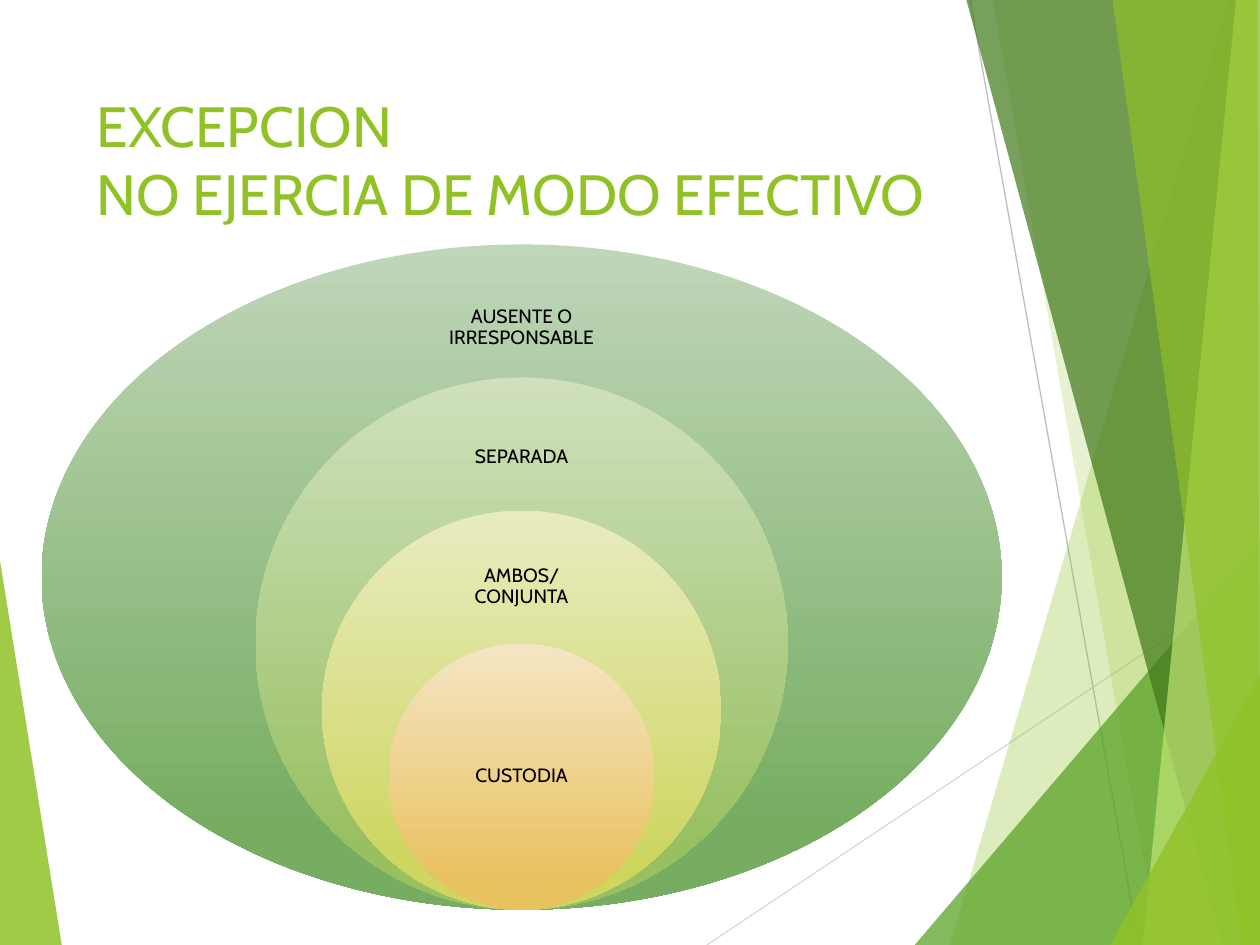
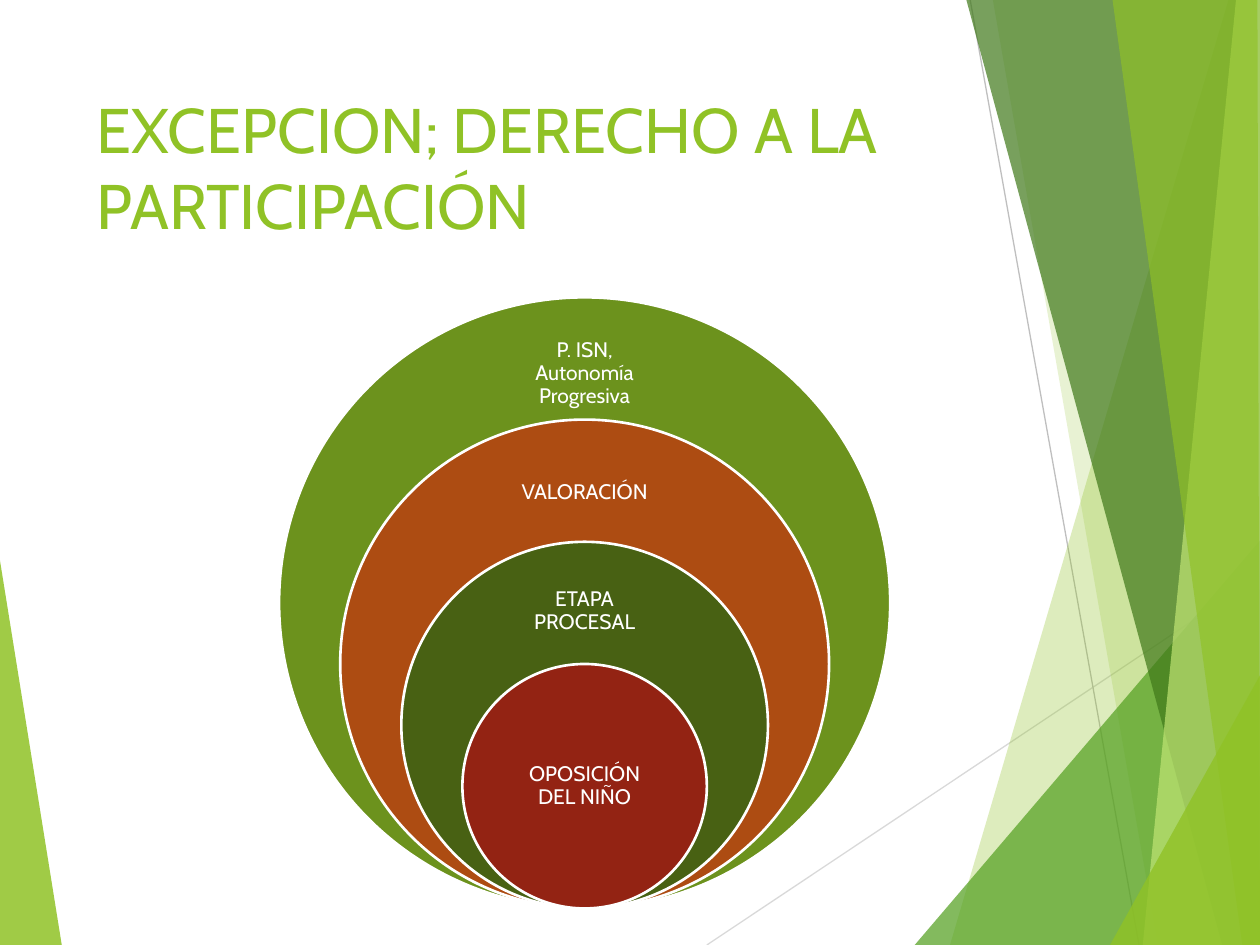
from dataclasses import dataclass

from lxml import etree
from pptx import Presentation
from pptx import util as u
from pptx.dml.color import RGBColor
from pptx.enum import shapes, text
from pptx.oxml import ns


@dataclass(frozen=True)
class Theme:
    font: str = "Cabin"
    lime: str = "90C226"
    green: str = "54A021"
    forest: str = "3F7819"
    pale_lime: str = "C0E474"
    light_gray: str = "D9D9D9"
    mid_gray: str = "BFBFBF"
    black: str = "000000"
    white: str = "FFFFFF"
    soft_rings: tuple = (("C0D6B9", "76AD61"), ("CFE0BC", "98C061"),
                         ("E8EBC0", "CED660"), ("F5E5C5", "E9C260"))
    solid_rings: tuple = ("6C921D", "AD4C12", "486113", "932313")
    long_title: float = 32.4
    title: float = 36
    soft_label: float = 11
    solid_label: float = 12
    hairline: float = 0.75
    outline: float = 1.5


THEME = Theme()
WIDTH, HEIGHT = 10, 7.5

RAYS = (((5.61, HEIGHT), (WIDTH, 4.57), THEME.light_gray),
        ((7.7, 0), (9.04, HEIGHT), THEME.mid_gray))
LEFT_WEDGE = (((0, 4.45), (0.49, HEIGHT), (0, HEIGHT)), THEME.lime, 85)
RIGHT_FACETS = (
    (((9.75, 0), (7.54, HEIGHT), (WIDTH, HEIGHT), (WIDTH, 0)), THEME.lime, 30),
    (((7.88, 0), (9.19, HEIGHT), (WIDTH, HEIGHT), (WIDTH, 0)), THEME.lime, 20),
    (((7.26, HEIGHT), (WIDTH, 4.29), (WIDTH, HEIGHT)), THEME.green, 72),
    (((7.67, 0), (9.7, HEIGHT), (WIDTH, HEIGHT), (WIDTH, 0)), THEME.forest, 70),
    (((9.81, 0), (9.07, HEIGHT), (WIDTH, HEIGHT), (WIDTH, 0)), THEME.pale_lime, 70),
    (((8.83, 0), (9.86, HEIGHT), (WIDTH, HEIGHT), (9.98, 0)), THEME.lime, 65),
    (((8.81, HEIGHT), (WIDTH, 5.36), (WIDTH, HEIGHT)), THEME.lime, 80),
)

RING_STEP = 0.2
LABEL_WIDTHS = (0.28, 0.35, 0.47, 0.71)
LABEL_TOPS = (0.05, 0.06, 0.08, 0.25)
LABEL_HEIGHTS = (0.15, 0.18, 0.22, 0.5)


def apply(target, values):
    for name, value in values.items():
        setattr(target, name, value)


class Painter:
    def __init__(self, deck, theme):
        self.deck = deck
        self.theme = theme
        self.page = None

    def new_page(self):
        self.page = self.deck.slides.add_slide(self.deck.slide_layouts[6])
        self.facet(*LEFT_WEDGE)
        for ray in RAYS:
            self.ray(*ray)
        for facet in RIGHT_FACETS:
            self.facet(*facet)

    def facet(self, corners, color, opacity):
        points = [(u.Inches(x), u.Inches(y)) for x, y in corners]
        builder = self.page.shapes.build_freeform(*points[0])
        builder.add_line_segments(points[1:], close=True)
        shape = builder.convert_to_shape()
        self.paint(shape, color)
        tint = shape._element.spPr.find(".//" + ns.qn("a:srgbClr"))
        etree.SubElement(tint, ns.qn("a:alpha"), val=str(opacity * 1000))

    def ray(self, start, end, color):
        ends = [u.Inches(value) for value in start + end]
        ray = self.page.shapes.add_connector(shapes.MSO_CONNECTOR.STRAIGHT, *ends)
        ray.line.color.rgb = RGBColor.from_string(color)
        ray.line.width = u.Pt(self.theme.hairline)
        etree.SubElement(ray._element.spPr, ns.qn("a:effectLst"))

    def paint(self, shape, fill, outline=None):
        shape.shadow.inherit = False
        if isinstance(fill, tuple):
            shape.fill.gradient()
            shape.fill.gradient_angle = 270
            for stop, color, position in zip(shape.fill.gradient_stops, fill, (0, 0.88)):
                stop.color.rgb = RGBColor.from_string(color)
                stop.position = position
        else:
            shape.fill.solid()
            shape.fill.fore_color.rgb = RGBColor.from_string(fill)
        if outline:
            shape.line.color.rgb = RGBColor.from_string(outline)
            shape.line.width = u.Pt(self.theme.outline)
        else:
            shape.line.fill.background()

    def add_text(self, words, place, size, color, frame_format, para_format):
        box = self.page.shapes.add_textbox(*[u.Inches(value) for value in place])
        apply(box.text_frame, {"word_wrap": True, **frame_format})
        para = box.text_frame.paragraphs[0]
        para.text = words
        apply(para, para_format)
        for span in para.runs:
            apply(span.font, {"name": self.theme.font, "size": u.Pt(size)})
            span.font.color.rgb = RGBColor.from_string(color)

    def title(self, words, size):
        self.add_text(words, (0.67, 0.67, 6.94, 1.44), size, self.theme.lime,
                      {"vertical_anchor": text.MSO_ANCHOR.TOP},
                      {"alignment": text.PP_ALIGN.LEFT})

    def label(self, words, place, size, color):
        sides = ("left", "top", "right", "bottom")
        margins = {f"margin_{side}": u.Inches(0.09) for side in sides}
        self.add_text(words, place, size, color,
                      {"vertical_anchor": text.MSO_ANCHOR.MIDDLE, **margins},
                      {"alignment": text.PP_ALIGN.CENTER, "line_spacing": 0.9})

    def nested_rings(self, labels, fills, center, bottom, diameter,
                     size, color, outline=None, outer_width=None):
        for index, (words, fill) in enumerate(zip(labels, fills)):
            height = diameter * (1 - RING_STEP * index)
            width = outer_width if outer_width and index == 0 else height
            top = bottom - height
            place = (center - width / 2, top, width, height)
            ring = self.page.shapes.add_shape(
                shapes.MSO_SHAPE.OVAL, *[u.Inches(value) for value in place])
            self.paint(ring, fill, outline)
            label_width = width * LABEL_WIDTHS[index]
            self.label(words, (center - label_width / 2,
                               top + height * LABEL_TOPS[index],
                               label_width, height * LABEL_HEIGHTS[index]),
                       size, color)


def main():
    deck = Presentation()
    deck.slide_width, deck.slide_height = u.Inches(WIDTH), u.Inches(HEIGHT)
    painter = Painter(deck, THEME)

    painter.new_page()
    painter.title("EXCEPCION\nNO EJERCIA DE MODO EFECTIVO", THEME.long_title)
    painter.nested_rings(
        ("AUSENTE O IRRESPONSABLE", "SEPARADA", "AMBOS/CONJUNTA", "CUSTODIA"),
        THEME.soft_rings, center=4.14, bottom=7.22, diameter=5.28,
        size=THEME.soft_label, color=THEME.black, outer_width=7.62)

    painter.new_page()
    painter.title("EXCEPCION; DERECHO A LA PARTICIPACIÓN", THEME.title)
    painter.nested_rings(
        ("P. ISN, Autonomía Progresiva", "VALORACIÓN", "ETAPA PROCESAL",
         "OPOSICIÓN DEL NIÑO"),
        THEME.solid_rings, center=4.64, bottom=7.21, diameter=4.85,
        size=THEME.solid_label, color=THEME.white, outline=THEME.white)

    deck.save("out.pptx")


if __name__ == "__main__":
    main()
